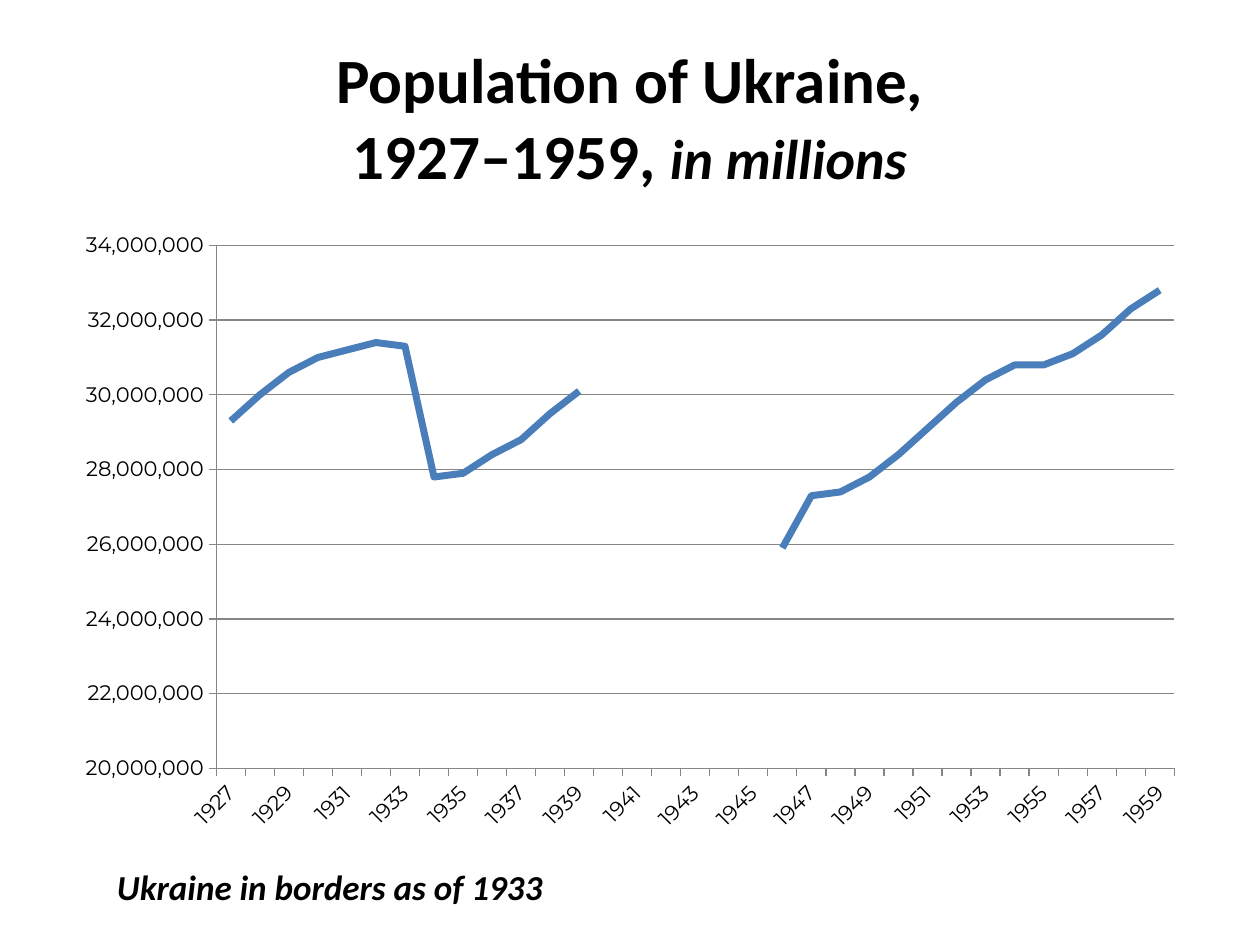
from pptx import Presentation
from pptx.chart.data import CategoryChartData
from pptx.dml.color import RGBColor
from pptx.enum.chart import XL_CHART_TYPE, XL_MARKER_STYLE, XL_TICK_MARK
from pptx.enum.text import MSO_ANCHOR, PP_ALIGN
from pptx.util import Emu, Pt

EMU_PER_PX = 9144
SLIDE_SIZE = (1000, 750)
TITLE_BOX = (50, 30, 900, 125)
CHART_BOX = (50, 175, 900, 495)
CAPTION_BOX = (83, 682, 811, 44)

BLACK = RGBColor(0x00, 0x00, 0x00)
GRID_GRAY = RGBColor(0x86, 0x86, 0x86)
LINE_BLUE = RGBColor(0x4A, 0x7E, 0xBB)

TITLE_LINES = ["Population of Ukraine,", "1927–1959, "]
TITLE_UNIT = "in millions"
CAPTION = "Ukraine in borders as of 1933"

FIRST_YEAR = 1927
SERIES_NAME = "Series 1"
WAR_YEARS = [None] * 6
MILLIONS = [
    29.3, 30.0, 30.6, 31.0, 31.2, 31.4, 31.3, 27.8, 27.9, 28.4, 28.8, 29.5, 30.1,
    *WAR_YEARS,
    25.9, 27.3, 27.4, 27.8, 28.4, 29.1, 29.8, 30.4, 30.8, 30.8, 31.1, 31.6, 32.3, 32.8,
]


def px(*lengths):
    return [Emu(length * EMU_PER_PX) for length in lengths]


def add_text(paragraph, text, size, italic=False):
    run = paragraph.add_run()
    run.text = text
    font = run.font
    font.name, font.size = "Calibri", Pt(size)
    font.bold, font.italic = True, italic
    font.color.rgb = BLACK


def style_line(line, color, width):
    line.color.rgb = color
    line.width = Pt(width)


def add_title(slide):
    title = slide.shapes.title
    title.left, title.top, title.width, title.height = px(*TITLE_BOX)
    title.text_frame.vertical_anchor = MSO_ANCHOR.MIDDLE
    heading = title.text_frame.paragraphs[0]
    heading.alignment = PP_ALIGN.CENTER
    add_text(heading, TITLE_LINES[0], size=36)
    heading.add_line_break()
    add_text(heading, TITLE_LINES[1], size=36)
    add_text(heading, TITLE_UNIT, size=32, italic=True)


def add_population_chart(slide):
    population = CategoryChartData(number_format="#,##0")
    population.categories = [str(FIRST_YEAR + i) for i in range(len(MILLIONS))]
    population.add_series(
        SERIES_NAME, [None if m is None else round(m * 1_000_000) for m in MILLIONS])
    chart = slide.shapes.add_chart(XL_CHART_TYPE.LINE, *px(*CHART_BOX), population).chart
    chart.has_legend = chart.has_title = False
    chart.font.name, chart.font.size = "Calibri", Pt(10)
    chart.font.color.rgb = BLACK
    chart.plots[0].vary_by_categories = False

    years, people = chart.category_axis, chart.value_axis
    for axis in (years, people):
        axis.major_tick_mark = XL_TICK_MARK.OUTSIDE
        axis.minor_tick_mark = XL_TICK_MARK.NONE
        labels = axis.tick_labels.font
        labels.name, labels.size = "Montserrat", Pt(12)
        labels.color.rgb = BLACK
        style_line(axis.format.line, GRID_GRAY, 0.75)
    years.has_major_gridlines = False
    years._element.txPr.bodyPr.set("rot", "-2700000")
    people.minimum_scale, people.maximum_scale = 20_000_000, 34_000_000
    people.major_unit = 2_000_000
    people.tick_labels.number_format = "#,##0"
    people.tick_labels.number_format_is_linked = False
    people.has_major_gridlines = True
    style_line(people.major_gridlines.format.line, GRID_GRAY, 0.75)

    curve = chart.plots[0].series[0]
    curve.smooth = False
    curve.marker.style = XL_MARKER_STYLE.NONE
    style_line(curve.format.line, LINE_BLUE, 4)


def add_caption(slide):
    caption = slide.shapes.add_textbox(*px(*CAPTION_BOX)).text_frame
    caption.word_wrap = True
    add_text(caption.paragraphs[0], CAPTION, size=20, italic=True)


def main():
    deck = Presentation()
    deck.slide_width, deck.slide_height = px(*SLIDE_SIZE)
    slide = deck.slides.add_slide(deck.slide_layouts[5])
    add_title(slide)
    add_population_chart(slide)
    add_caption(slide)
    deck.save("out.pptx")


if __name__ == "__main__":
    main()
